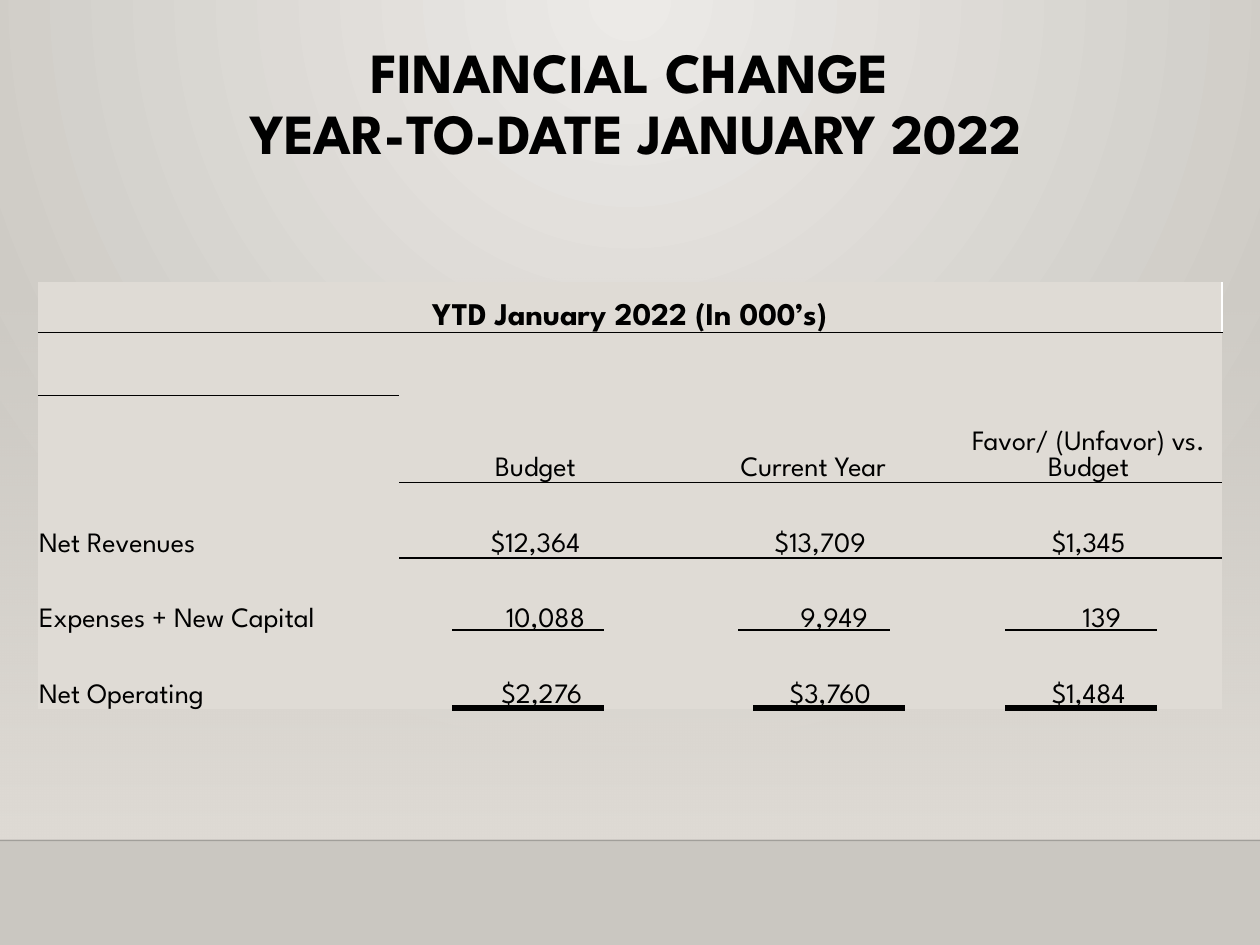
import pptx
import pptx.util
import pptx.oxml
import pptx.oxml.ns
import pptx.dml.color
import pptx.enum.text
import pptx.enum.shapes

FONT = "League Spartan"
INK, SAND = "000000", "DFDBD5"
WIDE, HIGH = 10, 7.5
TITLE = ["FINANCIAL CHANGE", "YEAR-TO-DATE JANUARY 2022"]
HEAD = "YTD January 2022 (In 000’s)"
NAMES = ["Budget", "Current Year", "Favor/ (Unfavor) vs. Budget"]
ROWS = [
    ("Net Revenues", [("$12,364", 0), ("$13,709", 0.11), ("$1,345", 0)]),
    ("Expenses + New Capital", [("10,088", 0.16), ("9,949", 0.33), ("139", 0.21)]),
    ("Net Operating", [("$2,276", 0.1), ("$3,760", 0.27), ("$1,484", 0)]),
]
COLS = [2.87, 2.16, 2.25, 2.12]
TALL = [0.4, 0.5, 0.34, 0.35, 0.6, 0.6, 0.6]
LEFT, TOP = 0.3, 2.24
RULES = [(5, 1.25, [3.59, 5.86, 7.98]), (5.62, 3, [3.59, 5.98, 7.98])]
RULE = 1.2
FLOOR = 6.67
PLAIN = "{2D5ABB26-0587-4C30-8999-92F81FD0307C}"

inch, pt = pptx.util.Inches, pptx.util.Pt
qn = pptx.oxml.ns.qn
MID = pptx.enum.text.PP_ALIGN.CENTER


def tint(code):
    return pptx.dml.color.RGBColor.from_string(code)


def node(text):
    space = pptx.oxml.ns.nsdecls("a")
    return pptx.oxml.parse_xml(text.replace(">", f" {space}>", 1))


def fade(owner, fill, stops, way):
    fill.solid()
    old = next(owner.iter(qn("a:solidFill")))
    marks = "".join(
        f'<a:gs pos="{pos * 1000}"><a:srgbClr val="{code}">'
        f'<a:alpha val="{alpha * 1000}"/></a:srgbClr></a:gs>'
        for pos, code, alpha in stops)
    new = node(f"<a:gradFill><a:gsLst>{marks}</a:gsLst>{way}</a:gradFill>")
    old.getparent().replace(old, new)


def style(para, size, bold=False):
    for run in para.runs:
        run.font.name, run.font.size, run.font.bold = FONT, pt(size), bold
        run.font.color.rgb = tint(INK)


def line(x, y, width, weight, alpha=100):
    rule = slide.shapes.add_connector(
        pptx.enum.shapes.MSO_CONNECTOR.STRAIGHT,
        inch(x), inch(y), inch(x + width), inch(y))
    rule.line.width = pt(weight)
    rule.line.color.rgb = tint(INK)
    clr = next(rule.element.iter(qn("a:srgbClr")))
    clr.append(node(f'<a:alpha val="{alpha * 1000}"></a:alpha>'))
    rule.element.spPr.append(node("<a:effectLst></a:effectLst>"))


def write(cell, text, size=16, bold=False, align=MID, shift=0):
    cell.text_frame.text = text
    cell.margin_left = inch(0.01 + shift)
    para = cell.text_frame.paragraphs[0]
    para.alignment = align
    style(para, size, bold)


def edge(cell, sides):
    props = cell._tc.get_or_add_tcPr()
    for i, (side, code) in enumerate(sides):
        props.insert(i, node(
            f'<a:ln{side} w="12700"><a:solidFill><a:srgbClr val="{code}"/>'
            f"</a:solidFill></a:ln{side}>"))


deck = pptx.Presentation()
deck.slide_width, deck.slide_height = inch(WIDE), inch(HIGH)
slide = deck.slides.add_slide(deck.slide_layouts[6])
fade(slide.element, slide.background.fill,
     [(0, "ECEAE7", 100), (100, "CAC7C1", 100)],
     '<a:path path="circle"><a:fillToRect l="43000" t="0" r="43000" b="100000"/></a:path>')

panel = slide.shapes.add_shape(
    pptx.enum.shapes.MSO_SHAPE.RECTANGLE, 0, inch(2.2), inch(WIDE), inch(4.46))
panel.shadow.inherit = False
panel.line.fill.background()
fade(panel.element, panel.fill, [(0, SAND, 0), (100, SAND, 100)],
     '<a:lin ang="5400000" scaled="0"/>')
line(0, FLOOR, WIDE, 1, 20)

title = slide.shapes.add_textbox(inch(0.9), inch(0.35), inch(8.2), inch(1.07))
frame = title.text_frame
frame.word_wrap = True
frame.margin_left = frame.margin_right = frame.margin_top = frame.margin_bottom = 0
frame.text = "\n".join(TITLE)
for para in frame.paragraphs:
    para.alignment = MID
    para.line_spacing = pt(34.8)
    style(para, 32.4, True)
frame.paragraphs[1]._p.get_or_add_pPr().set("marL", str(inch(0.1)))

shape = slide.shapes.add_table(
    len(TALL), len(COLS), inch(LEFT), inch(TOP), inch(sum(COLS)), inch(sum(TALL)))
grid = shape.table
next(shape.element.iter(qn("a:tableStyleId"))).text = PLAIN
for col, width in zip(grid.columns, COLS):
    col.width = inch(width)
for row, height in zip(grid.rows, TALL):
    row.height = inch(height)
for cell in grid.iter_cells():
    cell.fill.solid()
    cell.fill.fore_color.rgb = tint(SAND)
    cell.margin_left = cell.margin_right = cell.margin_top = inch(0.01)
    cell.margin_bottom = 0
    cell.vertical_anchor = pptx.enum.text.MSO_ANCHOR.BOTTOM

grid.cell(0, 0).merge(grid.cell(0, len(COLS) - 1))
write(grid.cell(0, 0), HEAD, 18, True)
edge(grid.cell(0, 0), [("R", "FFFFFF"), ("B", INK)])
edge(grid.cell(1, 0), [("T", INK)])
for c, name in enumerate(NAMES, 1):
    grid.cell(1, c).merge(grid.cell(3, c))
    write(grid.cell(1, c), name)
    edge(grid.cell(1, c), [("T", INK), ("B", INK)])
    edge(grid.cell(4, c), [("T", INK)])
for r, (name, sums) in enumerate(ROWS, 4):
    write(grid.cell(r, 0), name, align=pptx.enum.text.PP_ALIGN.LEFT)
    for c, (value, shift) in enumerate(sums, 1):
        write(grid.cell(r, c), value, shift=shift)

for y, weight, starts in RULES:
    for x in starts:
        line(x, y, RULE, weight)

deck.save("out.pptx")
